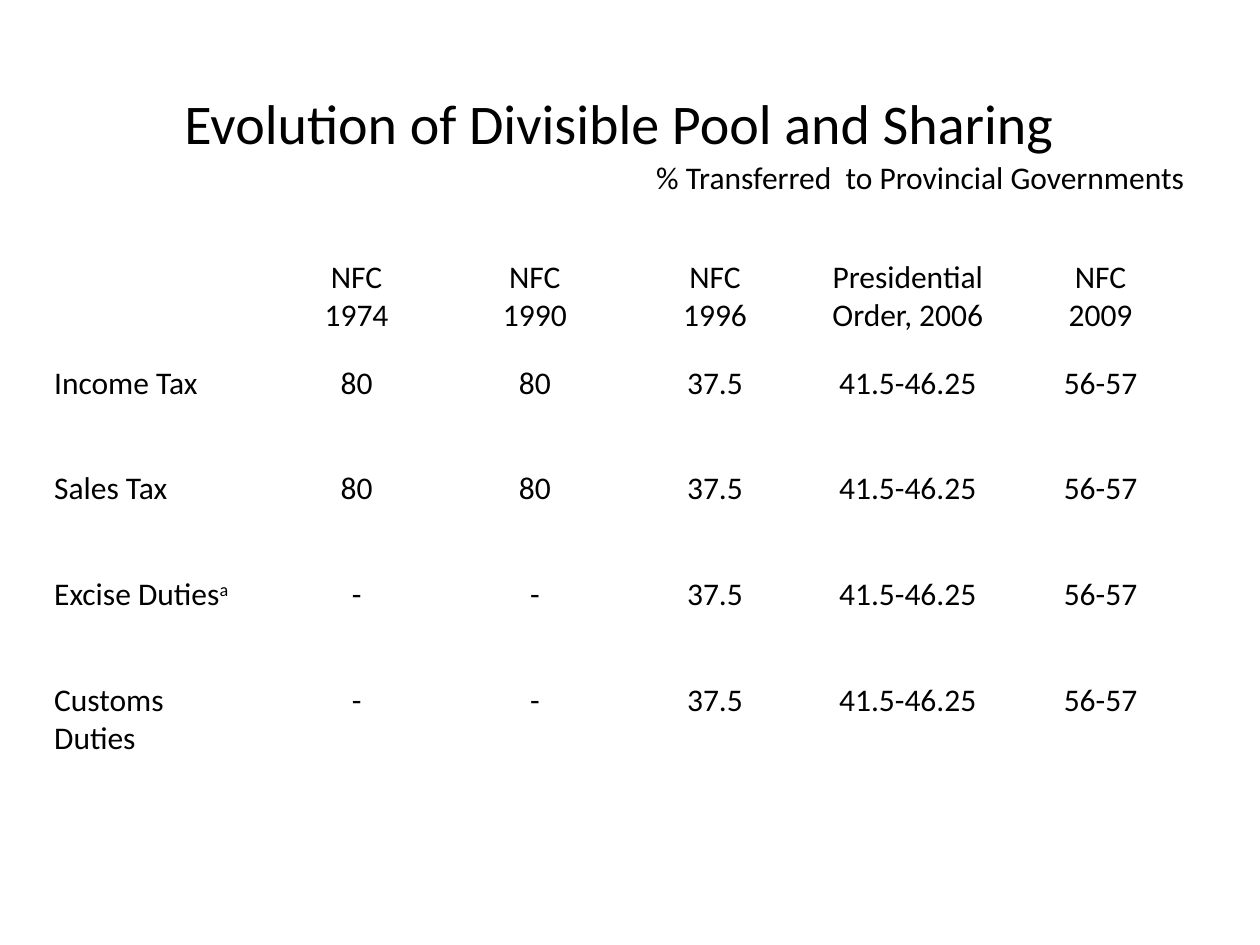
from pptx import Presentation
from pptx.dml.color import RGBColor
from pptx.enum.text import MSO_ANCHOR, PP_ALIGN
from pptx.util import Inches, Pt

INK = "000000"
TITLE = "Evolution of Divisible Pool and Sharing"
NOTE = "% Transferred  to Provincial Governments"
HEADS = ["", "NFC\n1974", "NFC\n1990", "NFC\n1996",
         "Presidential Order, 2006", "NFC\n2009"]
LATER = ["37.5", "41.5-46.25", "56-57"]
TAXES = [("Income Tax", "", "80"), ("Sales Tax", "", "80"),
         ("Excise Duties", "a", "-"), ("Customs Duties", "", "-")]
WIDTHS = [1.75, 1.5, 1.33, 1.53, 1.53, 1.53]
HEIGHTS = [1.33] + [0.84] * 5


def color(code):
    return RGBColor.from_string(code)


def write(par, text, size=18, align=PP_ALIGN.CENTER, raised=False):
    """Add one run to a paragraph."""
    par.alignment = align
    run = par.add_run()
    run.text = text
    run.font.name = "Calibri"
    run.font.size = Pt(size)
    run.font.color.rgb = color(INK)
    if raised:
        run.font._element.set("baseline", "30000")


def fill(cell, text, **form):
    """Write each line of text as its own paragraph."""
    frame = cell.text_frame
    for i, line in enumerate(text.split("\n")):
        par = frame.add_paragraph() if i else frame.paragraphs[0]
        if line:
            write(par, line, **form)


def main():
    deck = Presentation()
    deck.slide_width, deck.slide_height = Inches(10), Inches(7.5)
    slide = deck.slides.add_slide(deck.slide_layouts[6])
    table = slide.shapes.add_table(
        len(HEIGHTS), len(WIDTHS), Inches(0.33), Inches(0.67),
        Inches(sum(WIDTHS)), Inches(sum(HEIGHTS))).table
    table.first_row = table.horz_banding = False
    for col, width in zip(table.columns, WIDTHS):
        col.width = Inches(width)
    for row, height in zip(table.rows, HEIGHTS):
        row.height = Inches(height)
    for cell in table.iter_cells():
        cell.fill.background()
        cell.vertical_anchor = MSO_ANCHOR.TOP

    top = table.cell(0, 0)
    top.merge(table.cell(0, len(WIDTHS) - 1))
    fill(top, TITLE, size=32)
    write(top.text_frame.add_paragraph(), NOTE, align=PP_ALIGN.RIGHT)

    for c, head in enumerate(HEADS):
        fill(table.cell(1, c), head)
    for r, (tax, mark, early) in enumerate(TAXES, 2):
        label = table.cell(r, 0)
        fill(label, tax, align=PP_ALIGN.LEFT)
        if mark:
            write(label.text_frame.paragraphs[0], mark,
                  align=PP_ALIGN.LEFT, raised=True)
        for c, share in enumerate([early, early] + LATER, 1):
            fill(table.cell(r, c), share)
    deck.save("out.pptx")


if __name__ == "__main__":
    main()
